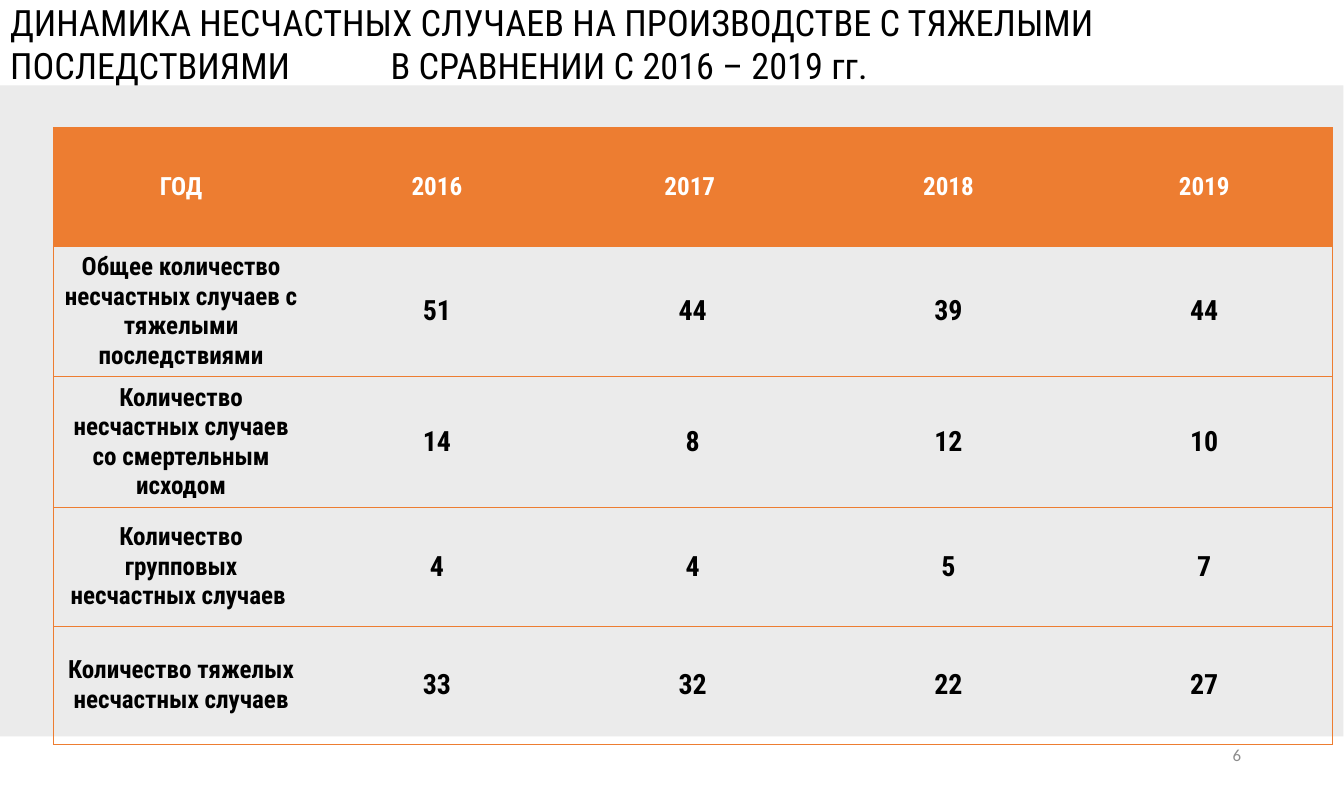
"""Build the slide comparing severe workplace accidents in 2016 – 2019."""
import pptx
import pptx.util
import pptx.dml.color
import pptx.enum.shapes
import pptx.enum.text
import pptx.oxml.ns
from lxml import etree

Inches, Pt, Cm = pptx.util.Inches, pptx.util.Pt, pptx.util.Cm
RGBColor = pptx.dml.color.RGBColor
PP_ALIGN, MSO_ANCHOR = pptx.enum.text.PP_ALIGN, pptx.enum.text.MSO_ANCHOR
qn = pptx.oxml.ns.qn

TITLE = ("ДИНАМИКА НЕСЧАСТНЫХ СЛУЧАЕВ НА ПРОИЗВОДСТВЕ С ТЯЖЕЛЫМИ "
         "ПОСЛЕДСТВИЯМИ\tВ СРАВНЕНИИ С 2016 – 2019 гг.")
PAGE = "6"
ROWS = [
    ("ГОД", "2016", "2017 ", "2018", "2019"),
    ("Общее количество несчастных случаев с тяжелыми последствиями", "51", "44", "39", "44"),
    ("Количество несчастных случаев со смертельным исходом", "14", "8", "12", "10"),
    ("Количество групповых несчастных случаев ", "4", "4", "5", "7"),
    ("Количество тяжелых несчастных случаев", "33", "32", "22", "27"),
]
FONT = "Roboto Condensed"
NO_STYLE = "{2D5ABB26-0587-4C30-8999-92F81FD0307C}"
BLACK = RGBColor(0x00, 0x00, 0x00)
WHITE = RGBColor(0xFF, 0xFF, 0xFF)
PANEL = RGBColor(0xEB, 0xEB, 0xEB)
ORANGE = RGBColor(0xED, 0x7D, 0x31)
PAGE_GREY = RGBColor(0x8C, 0x8C, 0x8C)


def format_text(p, name, size, color, align, bold=False):
    p.alignment = align
    p.font.name, p.font.size, p.font.bold = name, Pt(size), bold
    p.font.color.rgb = color


def set_border(cell, side):
    ln = etree.SubElement(cell._tc.get_or_add_tcPr(), qn(f"a:ln{side}"), w=str(Pt(0.5)))
    fill = etree.SubElement(ln, qn("a:solidFill"))
    etree.SubElement(fill, qn("a:srgbClr"), val=str(ORANGE))


def add_title(s):
    title = s.shapes.title
    title.left, title.top = Inches(0), Inches(-0.05)
    title.width, title.height = Inches(13.72), Inches(1.01)
    tf = title.text_frame
    tf.word_wrap = True
    tf.auto_size = pptx.enum.text.MSO_AUTO_SIZE.NONE
    tf.vertical_anchor = MSO_ANCHOR.TOP
    p = tf.paragraphs[0]
    p.add_run().text = TITLE
    p.line_spacing = 1.0
    format_text(p, FONT, 26, BLACK, PP_ALIGN.LEFT)
    tabs = etree.Element(qn("a:tabLst"))
    etree.SubElement(tabs, qn("a:tab"), pos=str(Inches(3.79)), algn="l")
    p._p.pPr.find(qn("a:defRPr")).addprevious(tabs)


def add_panel(s):
    panel = s.shapes.add_shape(pptx.enum.shapes.MSO_SHAPE.RECTANGLE,
                               Inches(0), Inches(0.85), Inches(13.38), Inches(6.48))
    panel.shadow.inherit = False
    panel.fill.solid()
    panel.fill.fore_color.rgb = PANEL
    panel.line.fill.background()
    s.shapes.title._element.addprevious(panel._element)


def add_page_number(s):
    tf = s.shapes.add_textbox(Inches(9.45), Inches(7.3), Inches(3.01), Inches(0.42)).text_frame
    tf.word_wrap = True
    tf.vertical_anchor = MSO_ANCHOR.MIDDLE
    p = tf.paragraphs[0]
    p.text = PAGE
    format_text(p, "Calibri", 12.1, PAGE_GREY, PP_ALIGN.RIGHT)


def add_accident_table(s):
    n_rows, n_cols = len(ROWS), len(ROWS[0])
    frame = s.shapes.add_table(n_rows, n_cols, Inches(0.53), Inches(1.27),
                               Inches(12.74), Inches(1.18 * n_rows))
    table = frame.table
    table._tbl.tblPr.find(qn("a:tableStyleId")).text = NO_STYLE
    for i, row in enumerate(ROWS):
        for j, text in enumerate(row):
            cell = table.cell(i, j)
            cell.vertical_anchor = MSO_ANCHOR.MIDDLE
            p = cell.text_frame.paragraphs[0]
            p.text = text
            format_text(p, FONT, 20 if i and j else 18, BLACK if i else WHITE,
                        PP_ALIGN.CENTER, True)
            if j == 0:
                set_border(cell, "L")
            if j == n_cols - 1:
                set_border(cell, "R")
            set_border(cell, "T")
            set_border(cell, "B")
            if i:
                cell.fill.background()
            else:
                cell.fill.solid()
                cell.fill.fore_color.rgb = ORANGE


def main():
    prs = pptx.Presentation()
    prs.slide_width, prs.slide_height = Cm(34), Cm(20)
    s = prs.slides.add_slide(prs.slide_layouts[5])
    add_title(s)
    add_panel(s)
    add_page_number(s)
    add_accident_table(s)
    prs.save("out.pptx")


if __name__ == "__main__":
    main()
